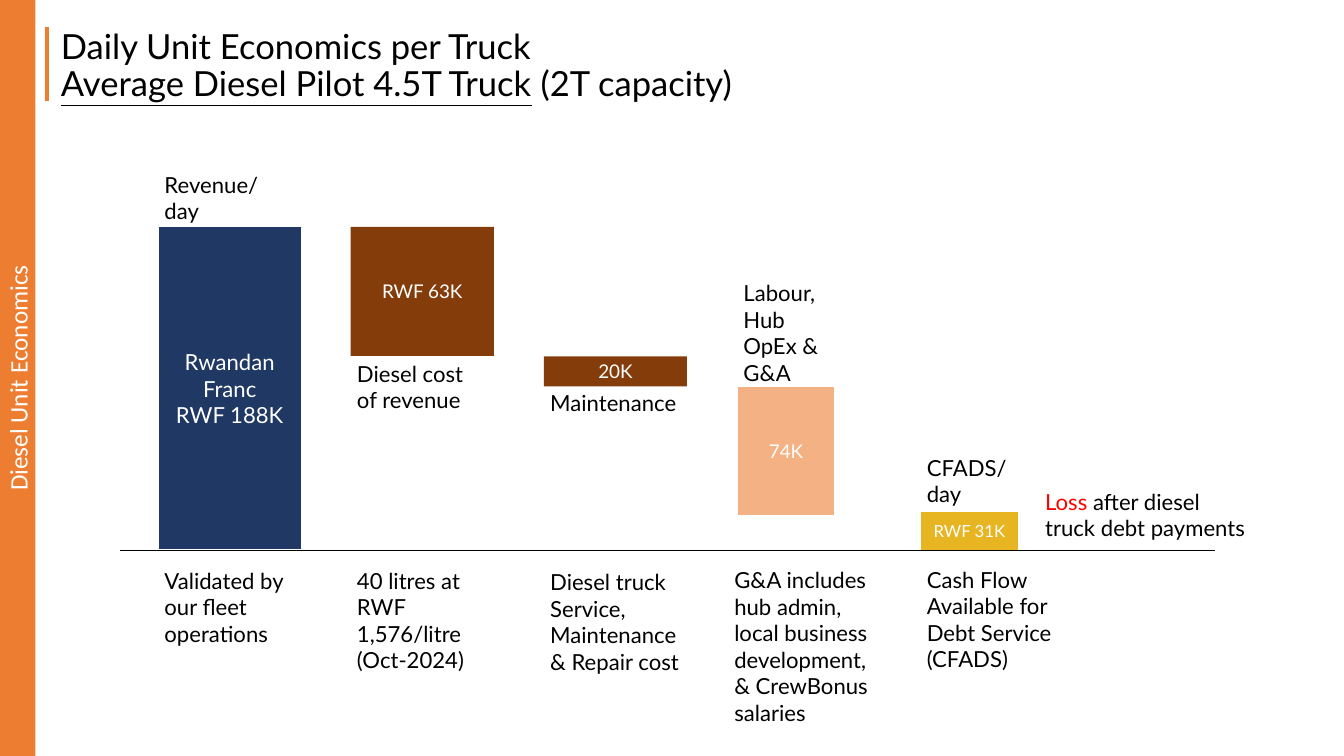
from pptx import Presentation
from pptx.util import Pt
from pptx.dml.color import RGBColor
from pptx.enum.shapes import MSO_SHAPE, MSO_CONNECTOR
from pptx.enum.text import MSO_ANCHOR, MSO_AUTO_SIZE, PP_ALIGN
from lxml.etree import SubElement
from pptx.oxml.ns import qn

COLORS = {
    "black": "000000", "white": "FFFFFF", "red": "FF0000", "orange": "ED7D31",
    "navy": "203864", "brown": "843C0B", "peach": "F4B183", "gold": "E7B522",
}
LABEL_SIZE = 15.8


def color(name):
    return RGBColor.from_string(COLORS[name])


def format_text(shape, size, color_name, font="Lato", align=PP_ALIGN.LEFT):
    for para in shape.text_frame.paragraphs:
        para.alignment = align
        for span in para.runs:
            span.font.size = Pt(size)
            span.font.name = font
            span.font.color.rgb = color(color_name)


deck = Presentation()
deck.slide_width, deck.slide_height = Pt(960), Pt(540)
page = deck.slides.add_slide(deck.slide_layouts[5])

# Title
title = page.shapes.title
title.left, title.top, title.width, title.height = Pt(39), Pt(18.75), Pt(841), Pt(60)
frame = title.text_frame
frame.text = "Daily Unit Economics per Truck"
subtitle = frame.add_paragraph()
subtitle.add_run().text = "Average Diesel Pilot 4.5T Truck"
subtitle.add_run().text = " (2T capacity)"
format_text(title, 24.7, "black")
subtitle.runs[0].font.underline = True
for para in frame.paragraphs:
    para.line_spacing = 0.9
frame.word_wrap = True
frame.auto_size = MSO_AUTO_SIZE.NONE
frame.vertical_anchor = MSO_ANCHOR.TOP

# Waterfall bars and side band:
# text, left, top, width, height, fill, outlined, text size, font, rotation
blocks = [
    ("Rwandan Franc\nRWF 188K", 113, 162, 102.25, 231, "navy", True, LABEL_SIZE, "Lato", 0),
    ("RWF 63K", 250.5, 162, 102.25, 92.25, "brown", False, 13.5, "Lato", 0),
    ("20K", 388.5, 254.5, 102.25, 21.5, "brown", False, 13.5, "Lato", 0),
    ("74K", 526.5, 276, 70, 92.25, "peach", True, 13.5, "Lato", 0),
    ("RWF 31K", 657.5, 365, 70, 28.5, "gold", True, 12, "Lato", 0),
    ("Diesel Unit Economics", -257.5, 257.25, 540, 25.5, "orange", False, 18, "Calibri", 270),
]
for text, left, top, width, height, fill, outlined, size, font, rotation in blocks:
    block = page.shapes.add_shape(MSO_SHAPE.RECTANGLE, Pt(left), Pt(top), Pt(width), Pt(height))
    block.shadow.inherit = False
    block.rotation = rotation
    block.fill.solid()
    block.fill.fore_color.rgb = color(fill)
    if outlined:
        block.line.color.rgb = color("white")
        block.line.width = Pt(1)
    else:
        block.line.fill.background()
    block.text_frame.text = text
    block.text_frame.word_wrap = True
    block.text_frame.vertical_anchor = MSO_ANCHOR.MIDDLE
    format_text(block, size, "white", font, PP_ALIGN.CENTER)

# Baseline and title rule: start x, start y, end x, end y, color, width
rules = [
    (86, 393, 868, 393, "black", 0.5),
    (33.5, 19, 33.5, 72, "orange", 3),
]
for start_x, start_y, end_x, end_y, stroke, weight in rules:
    rule = page.shapes.add_connector(
        MSO_CONNECTOR.STRAIGHT, Pt(start_x), Pt(start_y), Pt(end_x), Pt(end_y))
    rule.line.color.rgb = color(stroke)
    rule.line.width = Pt(weight)
    SubElement(rule._element.spPr, qn("a:effectLst"))

# Bar names and the notes under the baseline: text, left, top, width, height
labels = [
    ("Revenue/\nday", 113, 120, 87, 42.5),
    ("Diesel cost of revenue", 250.5, 255, 102.5, 42.5),
    ("Maintenance", 388.5, 276, 102.5, 23.5),
    ("Labour, Hub OpEx & G&A", 526.5, 197.5, 70.5, 80.5),
    ("CFADS/\nday", 657.5, 322, 87, 42.5),
    ("Validated by our fleet operations", 113, 403, 102.5, 61.5),
    ("40 litres at RWF 1,576/litre (Oct-2024)", 250.5, 403, 107.5, 80.5),
    ("Diesel truck Service, Maintenance & Repair cost", 388.5, 404, 107.5, 80.5),
    ("G&A includes hub admin, local business development, & CrewBonus salaries",
     520, 402.5, 115, 119),
    ("Cash Flow Available for Debt Service (CFADS)", 657.5, 402, 111.5, 80.5),
    ("Loss after diesel truck debt payments", 742, 346.5, 153.5, 42.5),
]
for text, left, top, width, height in labels:
    label = page.shapes.add_textbox(Pt(left), Pt(top), Pt(width), Pt(height))
    frame = label.text_frame
    frame.word_wrap = True
    frame.auto_size = MSO_AUTO_SIZE.SHAPE_TO_FIT_TEXT
    frame.text = text
    if text.startswith("Loss"):
        para = frame.paragraphs[0]
        para.runs[0].text = "Loss"
        para.add_run().text = text.removeprefix("Loss")
    format_text(label, LABEL_SIZE, "black")
    if text.startswith("Loss"):
        para.runs[0].font.color.rgb = color("red")

for box in page.shapes:
    if box.is_placeholder or box.name.startswith("TextBox"):
        frame = box.text_frame
        frame.margin_left = frame.margin_right = Pt(4.5)
        frame.margin_top = frame.margin_bottom = Pt(2.25)

deck.save("out.pptx")
